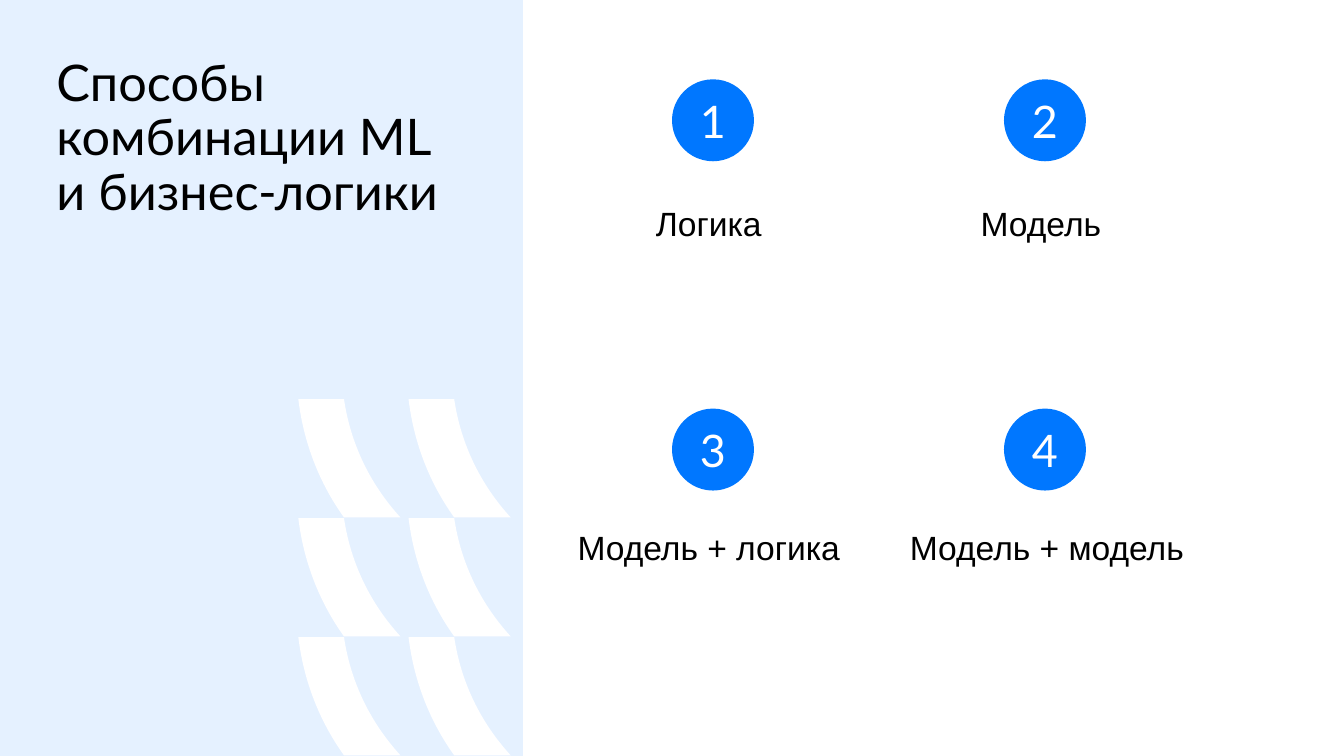
from lxml.etree import SubElement
from pptx import Presentation
from pptx.dml.color import RGBColor
from pptx.enum.shapes import MSO_SHAPE
from pptx.enum.text import MSO_ANCHOR, PP_ALIGN
from pptx.oxml.ns import qn
from pptx.util import Inches, Pt

BLUE = RGBColor(0x00, 0x77, 0xFF)
WHITE = RGBColor(0xFF, 0xFF, 0xFF)
BLACK = RGBColor(0x00, 0x00, 0x00)

# Content: label, label width; the numbers follow reading order
TITLE = "Способы комбинации ML\nи бизнес-логики"
METHODS = [
    ("Логика", 2.06),
    ("Модель", 2.06),
    ("Модель + логика", 2.06),
    ("Модель + модель", 2.15),
]

# Grid of methods
COLUMNS = 2
LEFT, COL_STEP = 5.0, 2.47
TOP, ROW_STEP = 0.59, 2.45
CIRCLE = 0.61
LABEL_INDENT = 0.72
LABEL_ROWS = [(1.44, 1.36), (3.85, 1.29)]  # top, height

# Grid of curved stripes; each side is a Bezier curve relative to its cell
STRIPE_XS = [2.22, 3.04]
STRIPE_TOP, STRIPE_STEP, STRIPE_H = 2.97, 0.885, 0.88
RIGHT_SIDE = [(0.34, 0), (0.39, 0.34), (0.54, 0.64), (0.76, STRIPE_H)]
LEFT_SIDE = [(0.34, STRIPE_H), (0.16, 0.63), (0.04, 0.33), (0, 0)]


def add_text(s, text, font="Arial", size=18, color=BLACK, align=PP_ALIGN.CENTER,
             anchor=MSO_ANCHOR.TOP, spacing=1.0, margins=(0, 0.04, 0.07, 0.04)):
    tf = s.text_frame
    tf.word_wrap = True
    tf.vertical_anchor = anchor
    (tf.margin_left, tf.margin_top,
     tf.margin_right, tf.margin_bottom) = [Inches(m) for m in margins]
    p = tf.paragraphs[0]
    p.alignment = align
    p.line_spacing = spacing
    for i, line in enumerate(text.split("\n")):
        if i:
            p.add_line_break()
        r = p.add_run()
        r.text = line
        r.font.name, r.font.size = font, Pt(size)
        r.font.color.rgb = color


def paint(s, color):
    s.shadow.inherit = False
    s.fill.solid()
    s.fill.fore_color.rgb = color
    s.line.fill.background()


def add_box(slide, x, y, w, h):
    return slide.shapes.add_textbox(Inches(x), Inches(y), Inches(w), Inches(h))


def add_shape(slide, kind, x, y, w, h, color):
    s = slide.shapes.add_shape(kind, Inches(x), Inches(y), Inches(w), Inches(h))
    paint(s, color)
    return s


def add_stripe(slide, x, y):
    outline = [(Inches(x + dx), Inches(y + dy)) for dx, dy in RIGHT_SIDE + LEFT_SIDE]
    builder = slide.shapes.build_freeform(*outline[0])
    builder.add_line_segments(outline[1:], close=True)
    s = builder.convert_to_shape()
    paint(s, WHITE)
    # Turn the three segments of each side into one Bezier curve
    segments = list(s.element.iter(qn("a:lnTo")))
    for first in (0, 4):
        curve, *others = segments[first:first + 3]
        curve.tag = qn("a:cubicBezTo")
        for segment in others:
            curve.append(segment[0])
            segment.getparent().remove(segment)


def main():
    prs = Presentation()
    prs.slide_width, prs.slide_height = Inches(10), Inches(5.625)
    slide = prs.slides.add_slide(prs.slide_layouts[6])

    # Side panel, 10 % opaque
    panel = add_shape(slide, MSO_SHAPE.RECTANGLE, 0, 0, 3.89, 5.625, BLUE)
    srgb = next(panel.element.spPr.iter(qn("a:srgbClr")))
    SubElement(srgb, qn("a:alpha")).set("val", "10000")

    # Stripes
    for row in range(3):
        for x in STRIPE_XS:
            add_stripe(slide, x, STRIPE_TOP + row * STRIPE_STEP)

    # Numbered methods
    for i, (label, width) in enumerate(METHODS):
        row, col = divmod(i, COLUMNS)
        x, y = LEFT + col * COL_STEP, TOP + row * ROW_STEP
        circle = add_shape(slide, MSO_SHAPE.OVAL, x, y, CIRCLE, CIRCLE, BLUE)
        add_text(circle, str(i + 1), font="Lato", size=24, color=WHITE,
                 anchor=MSO_ANCHOR.MIDDLE, margins=(0.07, 0.04, 0.07, 0.04))
        label_top, height = LABEL_ROWS[row]
        add_text(add_box(slide, x - LABEL_INDENT, label_top, width, height),
                 label, spacing=1.1)

    # Title
    add_text(add_box(slide, 0.42, 0.43, 3.18, 1.57), TITLE, font="Lato", size=27,
             align=PP_ALIGN.LEFT, spacing=0.9, margins=(0, 0, 0, 0))

    prs.save("out.pptx")


if __name__ == "__main__":
    main()
